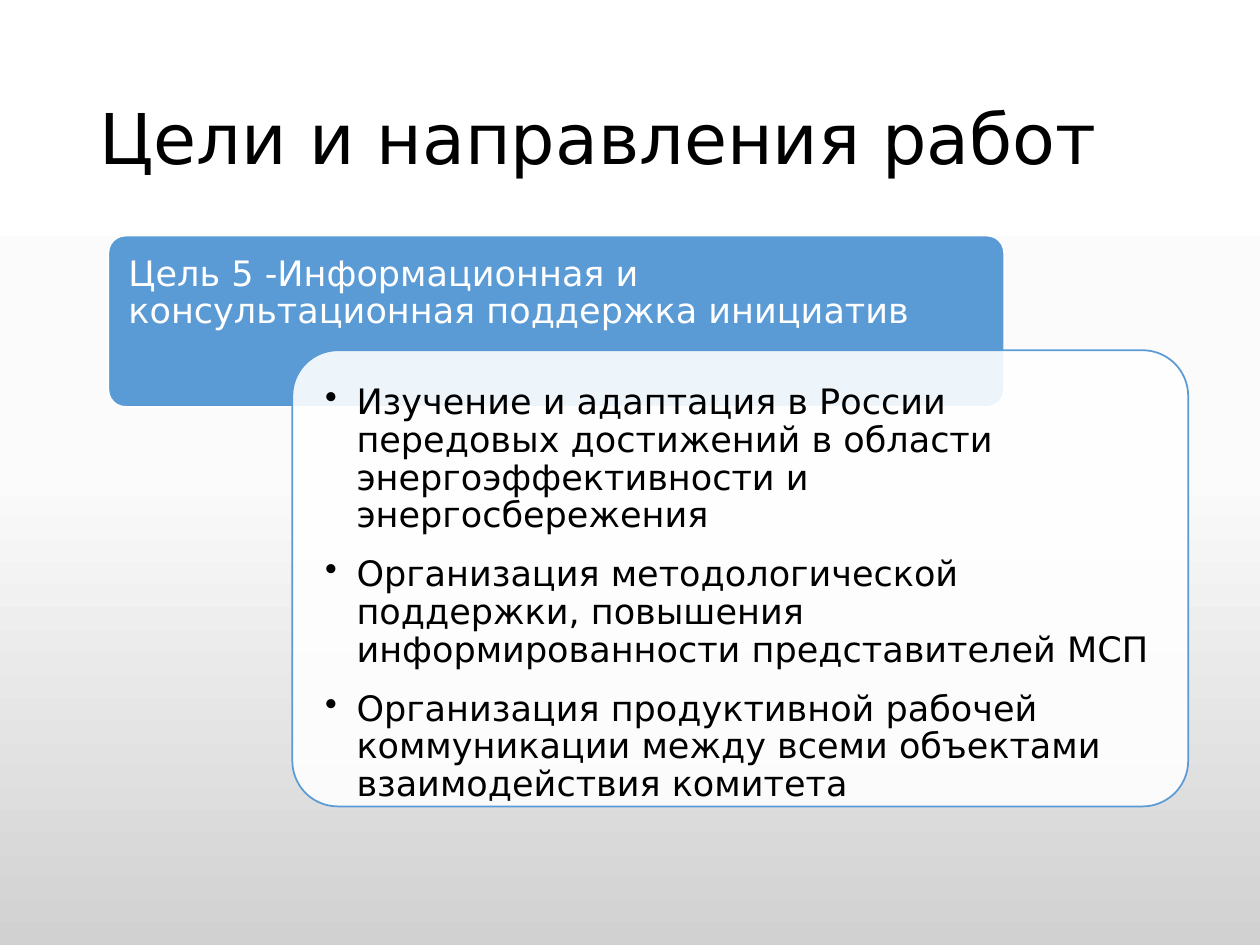
"""Build a slide with one goal card and its overlapping list of work directions."""
import copy

import pptx
import pptx.dml.color
import pptx.enum.shapes
import pptx.enum.text
import pptx.oxml
import pptx.oxml.ns
import pptx.util
from pptx.util import Inches, Pt

HEADING = "Цели и направления работ"
GOAL = "Цель 5 -Информационная и консультационная поддержка инициатив"
DIRECTIONS = [
    "Изучение и адаптация в России передовых достижений в области энергоэффективности и энергосбережения",
    "Организация методологической поддержки, повышения информированности представителей МСП",
    "Организация продуктивной рабочей коммуникации между всеми объектами взаимодействия комитета",
]
COLORS = {"blue": "5B9BD5", "white": "FFFFFF", "black": "000000", "pale": "FBFBFB", "gray": "D1D1D1"}
BACKDROP = [(0, "white"), (0.5, "pale"), (1, "gray")]
FONT = "DejaVu Sans"
HEADING_BOX = (0.69, 0.4, 8.62, 1.45)
GOAL_CARD = (0.86, 1.87, 7.11, 1.36)
GOAL_BOX = (0.86, 1.87, 7.11, 0.91)
DIRECTIONS_CARD = (2.32, 2.78, 7.11, 3.62)
DIRECTIONS_BOX = (2.42, 2.89, 6.9, 3.41)
INSET = Inches(0.16)
INDENT = Inches(0.25)


def rgb(name):
    return pptx.dml.color.RGBColor.from_string(COLORS[name])


def apply(target, **values):
    for key, value in values.items():
        setattr(target, key, value)


def paint_backdrop(slide):
    fill = slide.background.fill
    fill.gradient()
    fill.gradient_angle = 270
    stop_list = slide.element.xpath(".//a:gsLst")[0]
    stop_list.append(copy.deepcopy(stop_list[-1]))
    for stop, (position, color) in zip(fill.gradient_stops, BACKDROP):
        stop.color.rgb = rgb(color)
        stop.position = position


def add_card(slide, box, fill, line, opacity=100):
    card = slide.shapes.add_shape(pptx.enum.shapes.MSO_SHAPE.ROUNDED_RECTANGLE, *map(Inches, box))
    card.adjustments[0] = 0.1
    card.shadow.inherit = False
    card.fill.solid()
    card.fill.fore_color.rgb = rgb(fill)
    card.line.color.rgb = rgb(line)
    card.line.width = Pt(1)
    if opacity < 100:
        color = card.fill._xPr.xpath("./a:solidFill/a:srgbClr")[0]
        alpha = pptx.oxml.parse_xml(f'<a:alpha {pptx.oxml.ns.nsdecls("a")} val="{opacity * 1000}"/>')
        color.append(alpha)


def write(frame, texts, size, color, anchor, gap=0, bullet=None):
    apply(frame, word_wrap=True, auto_size=pptx.enum.text.MSO_AUTO_SIZE.NONE, vertical_anchor=anchor)
    for index, text in enumerate(texts):
        paragraph = frame.add_paragraph() if index else frame.paragraphs[0]
        apply(paragraph, alignment=pptx.enum.text.PP_ALIGN.LEFT, line_spacing=0.9, space_after=Pt(gap))
        if bullet:
            paragraph.level = 1
            properties = paragraph._p.get_or_add_pPr()
            properties.set("marL", str(INDENT))
            properties.set("indent", str(-INDENT))
            mark = f'<a:buChar {pptx.oxml.ns.nsdecls("a")} char="{bullet}"/>'
            properties.append(pptx.oxml.parse_xml(mark))
        run = paragraph.add_run()
        run.text = text
        apply(run.font, name=FONT, size=Pt(size))
        run.font.color.rgb = rgb(color)


def add_text(slide, box, texts, color, bottom, **style):
    frame = slide.shapes.add_textbox(*map(Inches, box)).text_frame
    apply(frame, margin_left=INSET, margin_top=INSET, margin_right=INSET, margin_bottom=bottom)
    write(frame, texts, 20, color, pptx.enum.text.MSO_ANCHOR.TOP, **style)


def main():
    deck = pptx.Presentation()
    apply(deck, slide_width=Inches(10), slide_height=Inches(7.5))
    slide = deck.slides.add_slide(deck.slide_layouts.get_by_name("Title Only"))
    paint_backdrop(slide)

    heading = slide.shapes.title
    apply(heading, **dict(zip(("left", "top", "width", "height"), map(Inches, HEADING_BOX))))
    write(heading.text_frame, [HEADING], 40, "black", pptx.enum.text.MSO_ANCHOR.MIDDLE)

    add_card(slide, GOAL_CARD, "blue", "white")
    add_text(slide, GOAL_BOX, [GOAL], "white", INSET // 2, gap=7)
    add_card(slide, DIRECTIONS_CARD, "white", "blue", opacity=90)
    add_text(slide, DIRECTIONS_BOX, DIRECTIONS, "black", INSET, gap=12, bullet="•")
    deck.save("out.pptx")


if __name__ == "__main__":
    main()
